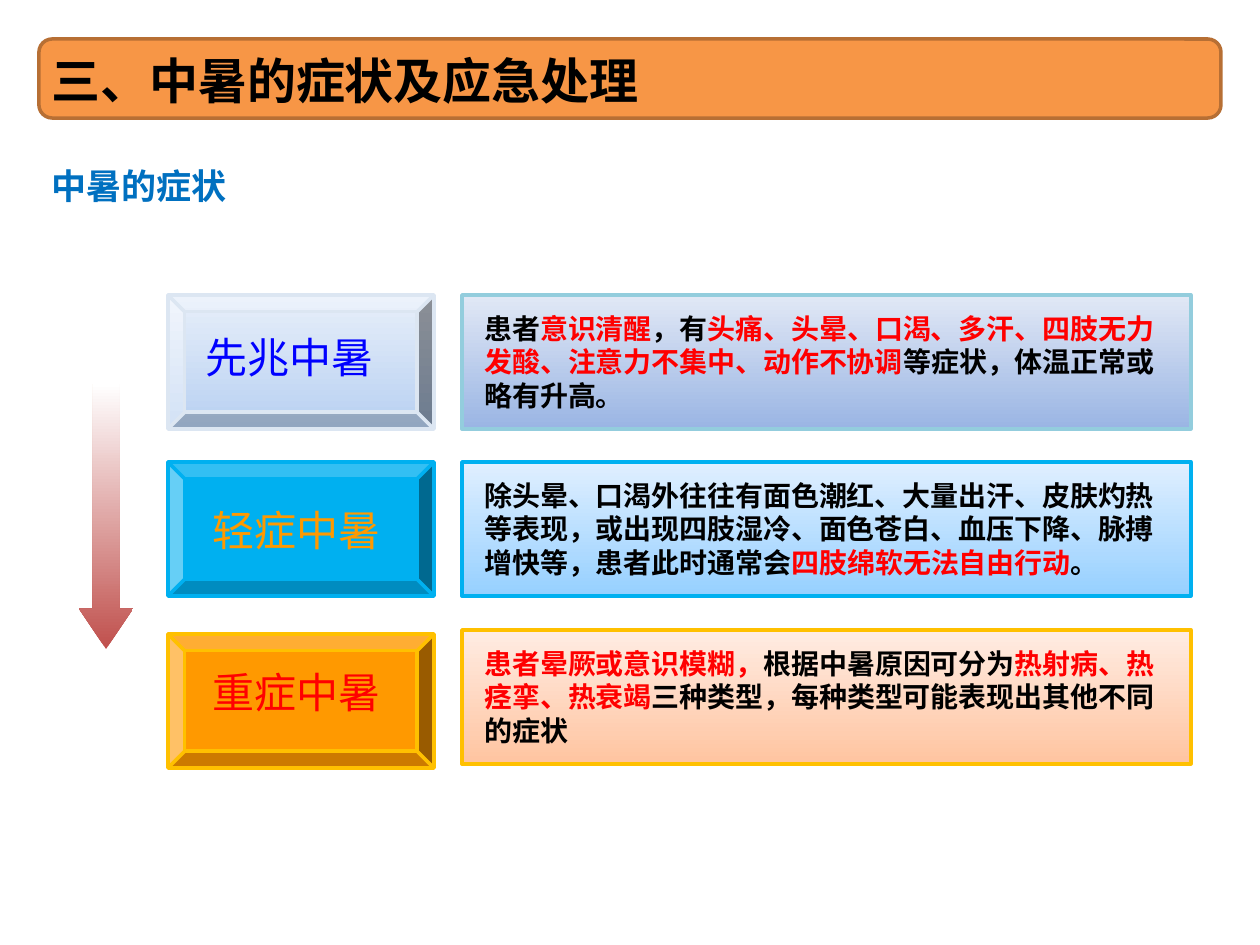
from lxml import etree
from pptx import Presentation
from pptx.dml.color import RGBColor
from pptx.enum.shapes import MSO_SHAPE as Shape
from pptx.enum.text import MSO_AUTO_SIZE as AutoSize, PP_ALIGN as Align
from pptx.oxml.ns import qn
from pptx.util import Emu, Pt

PX = 914400 / 126
BLACK, RED = "000000", "FF0000"

prs = Presentation()
prs.slide_width, prs.slide_height = Emu(round(1260 * PX)), Emu(round(945 * PX))
slide = prs.slides.add_slide(prs.slide_layouts[6])


def add_block(preset, box, fills, border=None, angle=90):
    """Draw a preset shape; two fills make a gradient running along angle."""
    block = slide.shapes.add_shape(preset, *(Emu(round(v * PX)) for v in box))
    block.shadow.inherit = False
    if len(fills) == 2:
        block.fill.gradient()
        block.fill.gradient_angle = angle
        for stop, color in zip(block.fill.gradient_stops, fills):
            stop.color.rgb = RGBColor.from_string(color)
    else:
        block.fill.solid()
        block.fill.fore_color.rgb = RGBColor.from_string(fills[0])
    if border:
        block.line.color.rgb = RGBColor.from_string(border)
        block.line.width = Pt(2)
    else:
        block.line.fill.background()
    return block


def add_text(box, pieces, size, bold=True, shadow=False, **spacing):
    """Write one paragraph from (text, colour) pieces."""
    area = slide.shapes.add_textbox(*(Emu(round(v * PX)) for v in box))
    frame = area.text_frame
    frame.word_wrap = True
    frame.auto_size = AutoSize.SHAPE_TO_FIT_TEXT
    paragraph = frame.paragraphs[0]
    for key, value in spacing.items():
        setattr(paragraph, key, value)
    for words, color in pieces:
        run = paragraph.add_run()
        run.text = words
        for key, value in {"size": Pt(size), "bold": bold, "name": "Arial"}.items():
            setattr(run.font, key, value)
        run.font.color.rgb = RGBColor.from_string(color)
        props = run.font._element
        props.set("lang", "zh-CN")
        latin = props.find(qn("a:latin"))
        east_asian = etree.Element(qn("a:ea"), typeface="Arial")
        latin.addnext(east_asian)
        if shadow:
            effects = etree.Element(qn("a:effectLst"))
            outer = etree.SubElement(effects, qn("a:outerShdw"),
                                     blurRad="38100", dist="38100", dir="2700000")
            etree.SubElement(outer, qn("a:srgbClr"), val=BLACK)
            latin.addprevious(effects)


add_block(Shape.ROUNDED_RECTANGLE, (39, 39, 1182, 79), ["F79646"], "B76F34")
around = {"space_before": Pt(12), "space_after": Pt(12)}
add_text((39, 44, 849, 72), [("三、中暑的症状及应急处理", BLACK)], 28, **around)
add_text((39, 137, 246, 77), [("中暑的症状", "0070C0")], 20, line_spacing=1.5, **around)

severity_arrow = add_block(Shape.UP_ARROW, (79, 384, 54, 265), ["C0504D", "FFFFFF"], angle=270)
severity_arrow.rotation = 180
severity_arrow.adjustments[0], severity_arrow.adjustments[1] = 0.5, 0.75

# detail top, badge top, label left and top, label, label colour,
# badge fills and border, detail fills and border, symptoms
stages = [
    (295, 295, 143, 325, "先兆中暑", "0000FF",
     ["B7D0F1", "E8EFFA"], "DCE6F2", ["9AB5E4", "E1E8F5"], "93CDDD",
     [("患者", BLACK), ("意识清醒", RED), ("，有", BLACK),
      ("头痛、头晕、口渴、多汗、四肢无力发酸、注意力不集中、动作不协调", RED),
      ("等症状，体温正常或略有升高。", BLACK)]),
    (462, 462, 150, 498, "轻症中暑", "FF9900",
     ["00B0F0"], "00B0F0", ["96D0FF", "E0EFFF"], "00B0F0",
     [("除头晕、口渴外往往有面色潮红、大量出汗、皮肤灼热等表现，"
       "或出现四肢湿冷、面色苍白、血压下降、脉搏增快等，患者此时通常会", BLACK),
      ("四肢绵软无法自由行动", RED), ("。", BLACK)]),
    (630, 634, 150, 660, "重症中暑", RED,
     ["FF9900"], "FFC000", ["FFC4A0", "FFECE3"], "FFC000",
     [("患者晕厥或意识模糊，", RED), ("根据中暑原因可分为", BLACK),
      ("热射病、热痉挛、热衰竭", RED),
      ("三种类型，每种类型可能表现出其他不同的症状", BLACK)]),
]
for (detail_top, badge_top, label_left, label_top, label, label_color,
     badge_fills, badge_border, detail_fills, detail_border, symptoms) in stages:
    add_block(Shape.RECTANGLE, (462, detail_top, 729, 134), detail_fills, detail_border)
    add_block(Shape.BEVEL, (168, badge_top, 266, 134), badge_fills, badge_border)
    add_text((label_left, label_top, 293, 63), [(label, label_color)], 24,
             bold=False, shadow=True, alignment=Align.CENTER)
    add_text((472, detail_top + 10, 718, 115), symptoms, 16, space_before=Pt(12))

prs.save("out.pptx")
